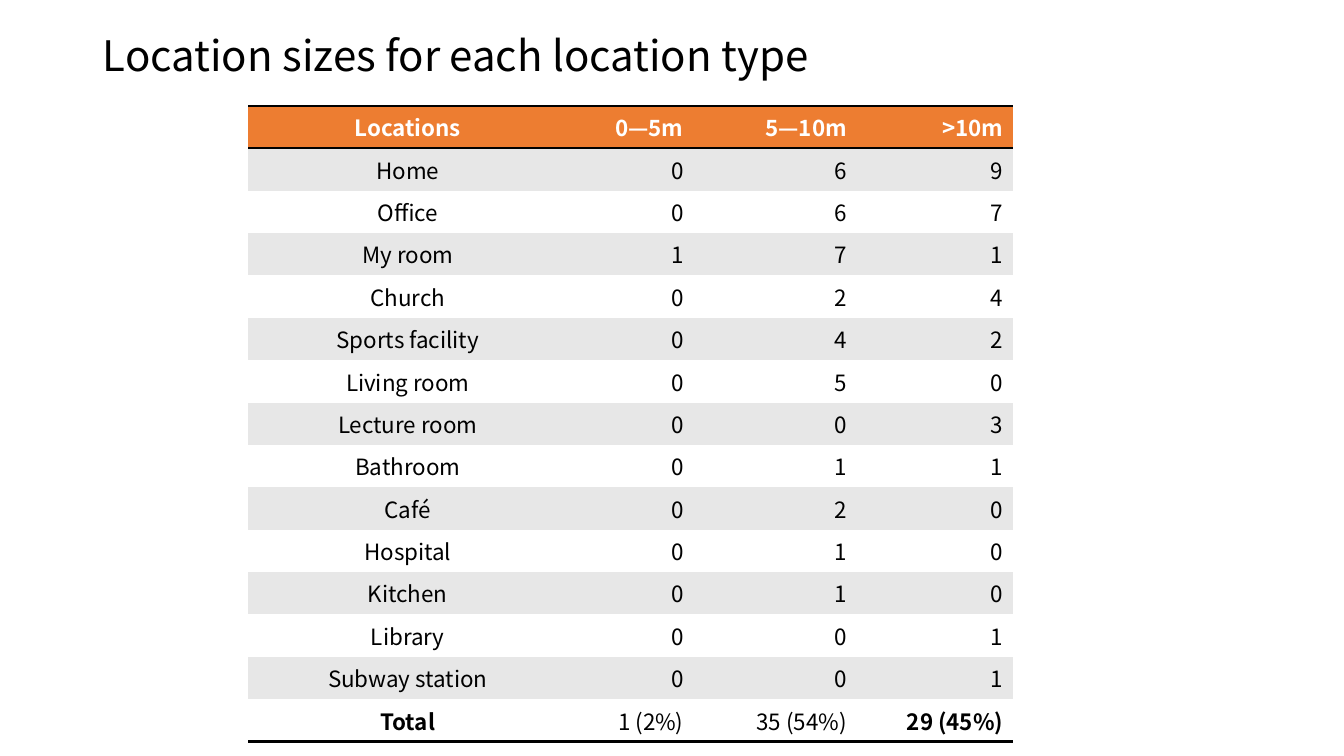
from lxml.etree import SubElement
from pptx import Presentation
from pptx.dml.color import RGBColor
from pptx.enum.text import MSO_ANCHOR as Anchor, MSO_AUTO_SIZE as Fit, PP_ALIGN as Align
from pptx.oxml.ns import qn
from pptx.util import Inches, Pt

BLACK = RGBColor(0x00, 0x00, 0x00)
WHITE = RGBColor(0xFF, 0xFF, 0xFF)
ORANGE = RGBColor(0xED, 0x7D, 0x31)
GREY = RGBColor(0xE7, 0xE7, 0xE7)
FONT = "Noto Sans CJK KR"
PLAIN = "{2D5ABB26-0587-4C30-8999-92F81FD0307C}"  # no style, no grid

HEAD = ("Locations", "0—5m", "5—10m", ">10m")
SIZES = [
    ("Home", 0, 6, 9),
    ("Office", 0, 6, 7),
    ("My room", 1, 7, 1),
    ("Church", 0, 2, 4),
    ("Sports facility", 0, 4, 2),
    ("Living room", 0, 5, 0),
    ("Lecture room", 0, 0, 3),
    ("Bathroom", 0, 1, 1),
    ("Café", 0, 2, 0),
    ("Hospital", 0, 1, 0),
    ("Kitchen", 0, 1, 0),
    ("Library", 0, 0, 1),
    ("Subway station", 0, 0, 1),
]
TOTAL = ("Total", "1 (2%)", "35 (54%)", "29 (45%)")
WIDTHS = (3.17, 1.25, 1.62, 1.55)
ROW_H = 0.41


class Deck:
    def __init__(self):
        self.prs = Presentation()
        self.prs.slide_width = Inches(13.33)
        self.prs.slide_height = Inches(7.5)
        self.slide = self.prs.slides.add_slide(self.prs.slide_layouts[5])

    def add_text(self, para, text, size, color=BLACK, bold=False, align=Align.LEFT):
        para.alignment = align
        run = para.add_run()
        run.text = text
        font = run.font
        font.name, font.size, font.bold = FONT, Pt(size), bold
        font.color.rgb = color
        # The font also has to cover East Asian glyphs.
        SubElement(run._r.get_or_add_rPr(), qn("a:ea"), typeface=FONT)

    def title(self, text, left, top, width, height):
        shape = self.slide.shapes.title
        shape.left, shape.top = Inches(left), Inches(top)
        shape.width, shape.height = Inches(width), Inches(height)
        frame = shape.text_frame
        frame.word_wrap, frame.auto_size = True, Fit.NONE
        frame.vertical_anchor = Anchor.MIDDLE
        para = frame.paragraphs[0]
        para.line_spacing = 0.9
        self.add_text(para, text, 30)

    def rule(self, cell, side):
        """Draw a black line on one side of a cell: T or B."""
        line = SubElement(cell._tc.get_or_add_tcPr(), qn(f"a:ln{side}"), w=str(Pt(2)))
        fill = SubElement(line, qn("a:solidFill"))
        SubElement(fill, qn("a:srgbClr"), val=str(BLACK))

    def table(self, rows, left, top):
        last = len(rows) - 1
        frame = self.slide.shapes.add_table(
            len(rows), len(WIDTHS), Inches(left), Inches(top),
            Inches(sum(WIDTHS)), Inches(ROW_H * len(rows)))
        table = frame.table
        table.first_row = table.horz_banding = False
        table._tbl.tblPr.find(qn("a:tableStyleId")).text = PLAIN
        for col, width in zip(table.columns, WIDTHS):
            col.width = Inches(width)
        for r, row in enumerate(rows):
            table.rows[r].height = Inches(ROW_H)
            sides = {0: "TB", last: "B"}.get(r, "")
            back = ORANGE if r == 0 else GREY if r % 2 else WHITE
            for c, value in enumerate(row):
                cell = table.cell(r, c)
                for side in sides:
                    self.rule(cell, side)
                cell.fill.solid()
                cell.fill.fore_color.rgb = back
                self.add_text(
                    cell.text_frame.paragraphs[0], str(value), 16,
                    color=BLACK if r else WHITE,
                    bold=r == 0 or (r == last and c in (0, 3)),
                    align=Align.RIGHT if c else Align.CENTER)


def main():
    deck = Deck()
    deck.title("Location sizes for each location type", 0.92, -0.15, 11.5, 1.45)
    deck.table([HEAD, *SIZES, TOTAL], 2.46, 1.05)
    deck.prs.save("out.pptx")


if __name__ == "__main__":
    main()
